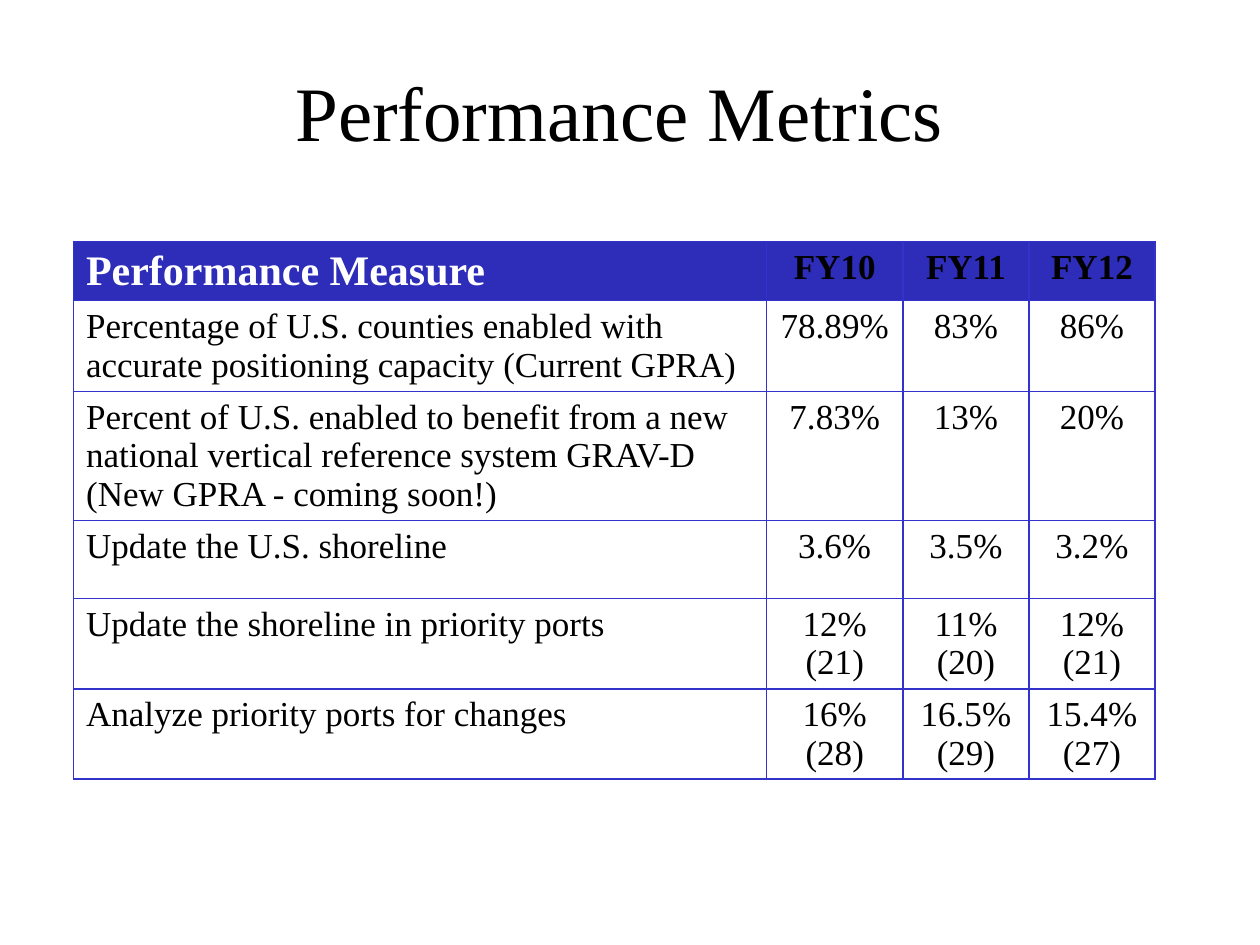
"""Build the Performance Metrics slide with its table of yearly measures."""
from dataclasses import dataclass

from lxml import etree
from pptx import Presentation
from pptx.dml.color import RGBColor
from pptx.enum.text import MSO_ANCHOR, PP_ALIGN
from pptx.oxml.ns import qn
from pptx.util import Pt

CENTER, LEFT = PP_ALIGN.CENTER, PP_ALIGN.LEFT
MIDDLE = MSO_ANCHOR.MIDDLE


@dataclass(frozen=True)
class Theme:
    font: str = "Times New Roman"
    text: str = "000000"
    head_text: str = "FFFFFF"
    head_fill: str = "2D2DB9"
    border: str = "3333CC"
    title_size: int = 44
    head_size: int = 24
    body_size: int = 20


THEME = Theme()
ROWS = [
    ("Performance Measure", "FY10", "FY11", "FY12"),
    ("Percentage of U.S. counties enabled with accurate positioning capacity (Current GPRA)",
     "78.89%", "83%", "86%"),
    ("Percent of U.S. enabled to benefit from a new national vertical reference system GRAV-D\n"
     "(New GPRA - coming soon!)", "7.83%", "13%", "20%"),
    ("Update the U.S. shoreline", "3.6%", "3.5%", "3.2%"),
    ("Update the shoreline in priority ports", "12% (21)", "11% (20)", "12% (21)"),
    ("Analyze priority ports for changes", "16% (28)", "16.5% (29)", "15.4% (27)"),
]
COL_WIDTHS = [396, 78, 72, 72]
ROW_HEIGHTS = [33.5, 52, 73.5, 44.5, 51.5, 51.5]


def style_text(tf, size, color, align, bold=False):
    for p in tf.paragraphs:
        p.alignment = align
        for r in p.runs:
            r.font.name = THEME.font
            r.font.size = Pt(size)
            r.font.bold = bold
            r.font.color.rgb = RGBColor.from_string(color)


def set_borders(cell):
    tcPr = cell._tc.get_or_add_tcPr()
    for i, side in enumerate(("lnL", "lnR", "lnT", "lnB")):
        ln = etree.Element(qn(f"a:{side}"), w=str(Pt(1)))
        fill = etree.SubElement(ln, qn("a:solidFill"))
        etree.SubElement(fill, qn("a:srgbClr"), val=THEME.border)
        tcPr.insert(i, ln)


prs = Presentation()
prs.slide_width, prs.slide_height = Pt(720), Pt(540)
s = prs.slides.add_slide(prs.slide_layouts[5])

title = s.shapes.title
title.left, title.top, title.width, title.height = Pt(48), Pt(18), Pt(612), Pt(90)
title.text_frame.text = "Performance Metrics"
title.text_frame.vertical_anchor = MIDDLE
style_text(title.text_frame, THEME.title_size, THEME.text, CENTER)

table = s.shapes.add_table(len(ROWS), len(COL_WIDTHS), Pt(42), Pt(138),
                           Pt(sum(COL_WIDTHS)), Pt(sum(ROW_HEIGHTS))).table
table.horz_banding = False
for col, width in zip(table.columns, COL_WIDTHS):
    col.width = Pt(width)
for row, height in zip(table.rows, ROW_HEIGHTS):
    row.height = Pt(height)

for i, values in enumerate(ROWS):
    for j, value in enumerate(values):
        cell = table.cell(i, j)
        cell.text_frame.text = value
        is_head = i == 0
        is_main_head = is_head and j == 0
        style_text(cell.text_frame,
                   THEME.head_size if is_main_head else THEME.body_size,
                   THEME.head_text if is_main_head else THEME.text,
                   LEFT if j == 0 else CENTER, is_head)
        if is_head:
            cell.fill.solid()
            cell.fill.fore_color.rgb = RGBColor.from_string(THEME.head_fill)
        else:
            cell.fill.background()
        set_borders(cell)

prs.save("out.pptx")
